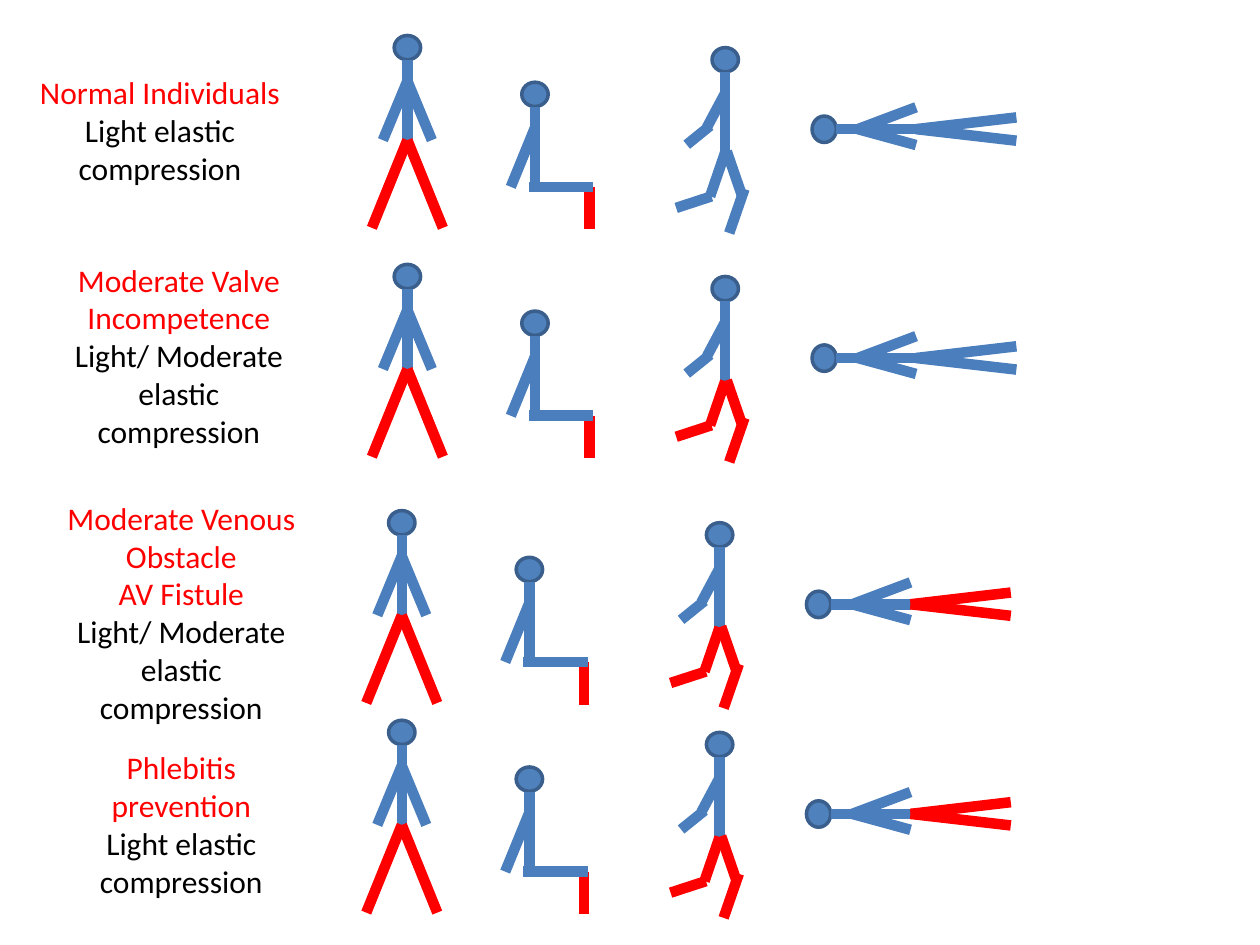
from dataclasses import dataclass
from lxml import etree
from pptx import Presentation
from pptx import util as u
from pptx.dml.color import RGBColor
from pptx.enum import shapes, text
from pptx.oxml import ns

Pt = u.Pt


@dataclass(frozen=True)
class Theme:
    body: RGBColor = RGBColor(0x4B, 0x7E, 0xBC)
    face: RGBColor = RGBColor(0x4F, 0x81, 0xBD)
    edge: RGBColor = RGBColor(0x3A, 0x5F, 0x8C)
    red: RGBColor = RGBColor(0xFF, 0, 0)
    black: RGBColor = RGBColor(0, 0, 0)
    font: str = "Calibri"
    size: float = 18
    limb: float = 6
    rim: float = 2


T = Theme()
HEAD_W, HEAD_H = 15.1, 13.9
LABEL_W = 154

# Each limb: is it a leg that may turn red, then x1, y1, x2, y2.
STAND = [
    (False, 0, 14, 0, 59.8),
    (True, 0, 59.8, -20.3, 109.9),
    (True, 0, 59.8, 20.3, 109.9),
    (False, 0, 26, -14, 59.8),
    (False, 0, 26, 14, 59.8),
]
SIT = [
    (False, 0, 14, 0, 59.8),
    (True, 31.2, 59.8, 31.2, 84.1),
    (False, -3.4, 59.8, 33.3, 59.8),
    (False, 0, 26, -13.8, 59.8),
]
RUN = [
    (False, 0, 14, 0, 59.8),
    (True, 0, 59.8, -8.6, 85),
    (True, -28, 91.6, -7.8, 85),
    (False, 0, 26, -10.4, 45.5),
    (False, -22, 55.5, -8.6, 44.7),
    (True, 0.9, 59.3, 9.5, 84.3),
    (True, 11, 80.8, 2.3, 106),
]
LIE = [
    (False, 7, 6.9, 52.5, 6.9),
    (True, 52.5, 6.9, 109.8, 13.5),
    (True, 52.5, 6.9, 109.8, 0.2),
    (False, 19.2, 6.9, 52.5, 16),
    (False, 19.2, 6.9, 52.5, -5.6),
]
# Each pose: x, y from the row start, head turn, limbs, first row with red legs.
POSES = [
    (0, 0, 0, STAND, 0),
    (72.9, 26.7, 0, SIT, 0),
    (181.6, 6.9, 0, RUN, 1),
    (238.2, 46.6, 270, LIE, 2),
]
# Each row: x, y of the figures, then x, y, height, red and black lines of the label.
ROWS = [
    (232.8, 20.3, 14.4, 38.2, 94.3, ["Normal Individuals"],
     ["Light elastic compression"]),
    (232.8, 151.1, 25.2, 145.4, 138.2, ["Moderate Valve Incompetence"],
     ["Light/ Moderate elastic compression"]),
    (229.6, 291.8, 26.6, 281.5, 159.8, ["Moderate Venous Obstacle", "AV Fistule"],
     ["Light/ Moderate elastic compression"]),
    (229.6, 411.6, 26.6, 424.1, 116.6, ["Phlebitis prevention"],
     ["Light elastic compression"]),
]


def head(slide, x, y, turn):
    disc = slide.shapes.add_shape(
        shapes.MSO_SHAPE.OVAL, Pt(x - HEAD_W / 2), Pt(y), Pt(HEAD_W), Pt(HEAD_H))
    disc.rotation = turn
    disc.shadow.inherit = False
    disc.fill.solid()
    disc.fill.fore_color.rgb = T.face
    disc.line.color.rgb = T.edge
    disc.line.width = Pt(T.rim)


def limb(slide, x, y, ends, tint):
    x1, y1, x2, y2 = ends
    bar = slide.shapes.add_connector(
        shapes.MSO_CONNECTOR.STRAIGHT, Pt(x + x1), Pt(y + y1), Pt(x + x2), Pt(y + y2))
    bar.line.color.rgb = tint
    bar.line.width = Pt(T.limb)
    etree.SubElement(bar._element.spPr, ns.qn("a:effectLst"))


def figure(slide, x, y, turn, limbs, is_red):
    head(slide, x, y, turn)
    for leg, *ends in limbs:
        limb(slide, x, y, ends, T.red if leg and is_red else T.body)


def label(slide, x, y, high, reds, blacks):
    box = slide.shapes.add_textbox(Pt(x), Pt(y), Pt(LABEL_W), Pt(high))
    frame = box.text_frame
    frame.word_wrap = True
    frame.auto_size = text.MSO_AUTO_SIZE.SHAPE_TO_FIT_TEXT
    frame.text = "\n".join(reds + blacks)
    for i, para in enumerate(frame.paragraphs):
        para.alignment = text.PP_ALIGN.CENTER
        font = para.runs[0].font
        font.name = T.font
        font.size = Pt(T.size)
        font.color.rgb = T.red if i < len(reds) else T.black


def main():
    deck = Presentation()
    deck.slide_width, deck.slide_height = Pt(720), Pt(540)
    slide = deck.slides.add_slide(deck.slide_layouts[6])
    for i, (x, y, *words) in enumerate(ROWS):
        label(slide, *words)
        for dx, dy, turn, limbs, first in POSES:
            figure(slide, x + dx, y + dy, turn, limbs, i >= first)
    deck.save("out.pptx")


if __name__ == "__main__":
    main()
